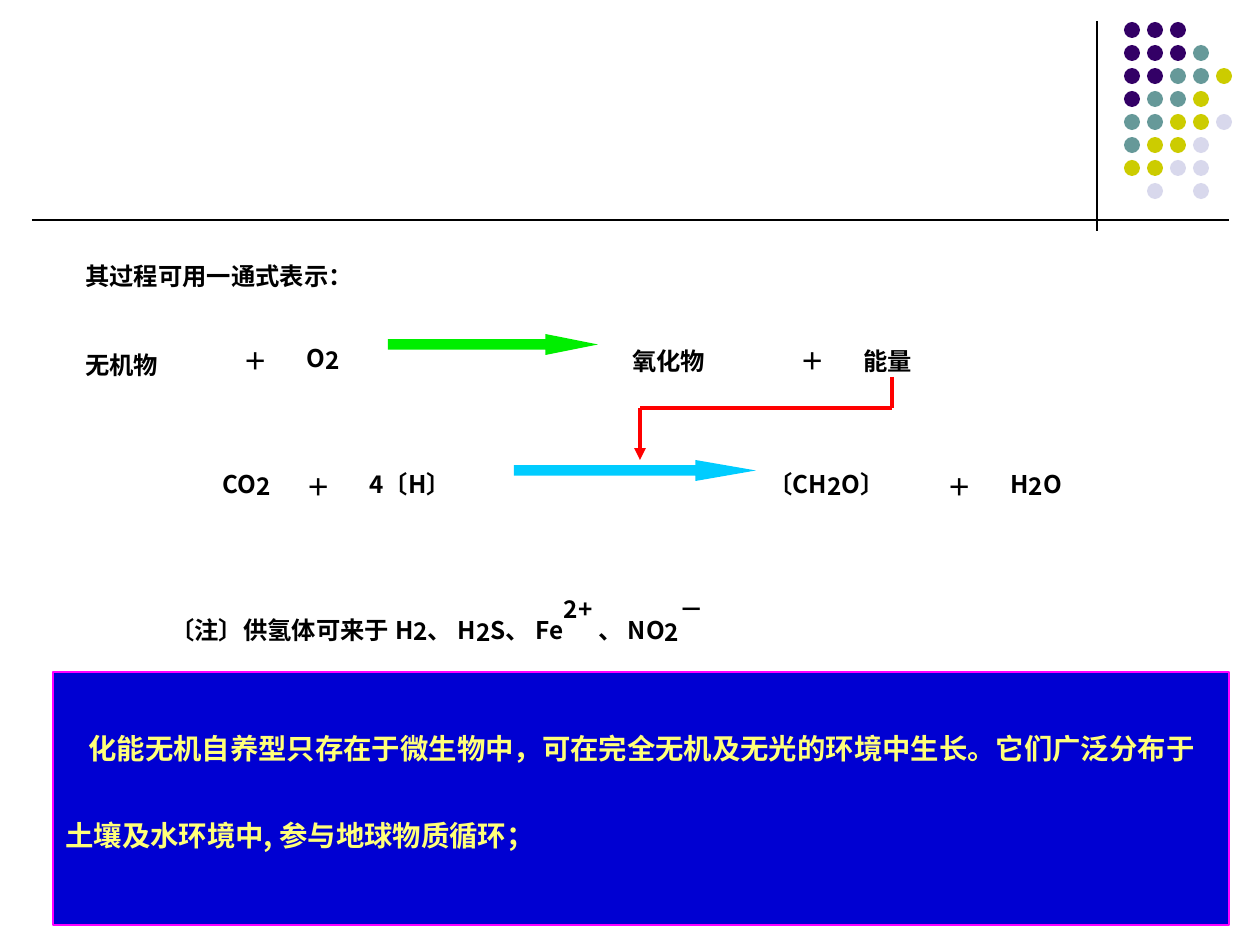
from lxml import etree
from pptx import Presentation
from pptx.dml.color import RGBColor
from pptx.enum.shapes import MSO_CONNECTOR, MSO_SHAPE
from pptx.enum.text import MSO_ANCHOR, MSO_AUTO_SIZE, PP_ALIGN
from pptx.oxml.ns import qn
from pptx.util import Pt

STRAIGHT = MSO_CONNECTOR.STRAIGHT
OVAL, ARROW, RECTANGLE = MSO_SHAPE.OVAL, MSO_SHAPE.RIGHT_ARROW, MSO_SHAPE.RECTANGLE
GROW, TOP, LEFT = MSO_AUTO_SIZE.SHAPE_TO_FIT_TEXT, MSO_ANCHOR.TOP, PP_ALIGN.LEFT

PX = 914400 // 126
FONT = "Noto Sans CJK SC"
SLIDE_SIZE = (1260, 945)

DOT_COLOURS = {"P": "330066", "T": "669999", "Y": "CCCC00", "L": "D8D8EC"}
DOT_ROWS = ["PPP", "PPPT", "PPTTY", "PTTY", "TTYYL", "TYYL", "YYLL", " L L"]
DOT_LEFT, DOT_TOP, DOT_PITCH, DOT_SIZE = 1124, 22, 23, 16

RULES = [(1097, 21, 1097, 231), (32, 220, 1229, 220)]

# Baselines in percent: all text is lowered, which also makes it smaller
BASE, SUB, SUPER = -20, -25, 30

# left, top, width, spans of (text, baseline)
LABELS = [
    (73, 229, 490, [("其过程可用一通式表示：", BASE)]),
    (73, 318, 152, [("无机物", BASE)]),
    (231, 314, 67, [("＋", BASE)]),
    (294, 311, 60, [("O", BASE), ("2", SUB)]),
    (620, 314, 161, [("氧化物", BASE)]),
    (788, 314, 67, [("＋", BASE)]),
    (851, 314, 110, [("能量", BASE)]),
    (210, 437, 82, [("CO", BASE), ("2", SUB)]),
    (294, 440, 67, [("＋", BASE)]),
    (357, 437, 152, [("4〔H〕", BASE)]),
    (756, 437, 188, [("〔CH", BASE), ("2", SUB), ("O〕", BASE)]),
    (935, 440, 67, [("＋", BASE)]),
    (998, 437, 82, [("H", BASE), ("2", SUB), ("O", BASE)]),
]
LABEL_HEIGHT = 63
NOTE = (95, 583, 949, [
    ("〔注〕供氢体可来于 H", BASE), ("2", -22), ("、 H", BASE), ("2", SUB), ("S、 Fe", BASE),
    ("2+ ", SUPER), ("、 NO", BASE), ("2", SUB), ("－", SUPER)])
NOTE_INDENT = 63

# left, top, width, height, colour
REACTION_ARROWS = [(388, 334, 210, 21, "00EE00"), (514, 460, 242, 21, "00CCFF")]
ENERGY_PATH = [(892, 377), (892, 408), (640, 408), (640, 460)]

SUMMARY = "化能无机自养型只存在于微生物中，可在完全无机及无光的环境中生长。它们广泛分布于土壤及水环境中, 参与地球物质循环；"
SUMMARY_PLACE = (53, 672, 1176, 253)
SUMMARY_INDENT = 23


def emu(*lengths):
    return [length * PX for length in lengths]


def rgb(colour):
    return RGBColor.from_string(colour)


def add_line(slide, ends, colour, width):
    line = slide.shapes.add_connector(STRAIGHT, *emu(*ends))
    line.line.color.rgb = rgb(colour)
    line.line.width = Pt(width)
    etree.SubElement(line._element.spPr, qn("a:effectLst"))
    return line


def add_filled(shapes, kind, place, colour):
    shape = shapes.add_shape(kind, *emu(*place))
    shape.shadow.inherit = False
    shape.fill.solid()
    shape.fill.fore_color.rgb = rgb(colour)
    shape.line.fill.background()
    return shape


def add_spans(para, spans, size=24, colour="000000"):
    """Add bold runs, each with an explicit baseline."""
    for text, baseline in spans:
        span = para.add_run()
        span.text = text
        for name, value in {"name": FONT, "size": Pt(size), "bold": True}.items():
            setattr(span.font, name, value)
        span.font.color.rgb = rgb(colour)
        properties = span._r.get_or_add_rPr()
        properties.set("baseline", str(baseline * 1000))
        etree.SubElement(properties, qn("a:ea")).set("typeface", FONT)


def add_label(slide, left, top, width, spans):
    box = slide.shapes.add_textbox(*emu(left, top, width, LABEL_HEIGHT))
    box.text_frame.word_wrap = False
    box.text_frame.auto_size = GROW
    para = box.text_frame.paragraphs[0]
    add_spans(para, spans)
    return para


def set_indent(para, margin, first):
    properties = para._p.get_or_add_pPr()
    properties.set("marL", str(margin * PX))
    properties.set("indent", str(first * PX))


def add_summary(slide):
    panel = add_filled(slide.shapes, RECTANGLE, SUMMARY_PLACE, "0000D2")
    panel.line.color.rgb = rgb("FF00FF")
    panel.line.width = Pt(1.5)
    frame = panel.text_frame
    for name, value in {"word_wrap": True, "auto_size": GROW, "vertical_anchor": TOP}.items():
        setattr(frame, name, value)
    para = frame.paragraphs[0]
    para.alignment = LEFT
    para.line_spacing = 1.35
    set_indent(para, 0, SUMMARY_INDENT)
    add_spans(para, [(SUMMARY, BASE)], 28, "FFFF79")


def main():
    deck = Presentation()
    deck.slide_width, deck.slide_height = emu(*SLIDE_SIZE)
    slide = deck.slides.add_slide(deck.slide_layouts[6])

    for ends in RULES:
        add_line(slide, ends, "000000", 0.75)
    dots = slide.shapes.add_group_shape()
    for row, keys in enumerate(DOT_ROWS):
        for column, key in enumerate(keys):
            if key in DOT_COLOURS:
                place = (DOT_LEFT + column * DOT_PITCH, DOT_TOP + row * DOT_PITCH,
                         DOT_SIZE, DOT_SIZE)
                add_filled(dots.shapes, OVAL, place, DOT_COLOURS[key])

    for label in LABELS:
        add_label(slide, *label)
    for *place, colour in REACTION_ARROWS:
        arrow = add_filled(slide.shapes, ARROW, place, colour)
        arrow.adjustments[0] = 0.5
        arrow.adjustments[1] = place[2] / place[3] / 4

    for start, end in zip(ENERGY_PATH, ENERGY_PATH[1:]):
        segment = add_line(slide, start + end, "FF0000", 2.25)
    etree.SubElement(segment.line._get_or_add_ln(), qn("a:tailEnd")).set("type", "triangle")

    note = add_label(slide, *NOTE)
    note.level = 1
    set_indent(note, NOTE_INDENT, 0)
    add_summary(slide)
    deck.save("out.pptx")


if __name__ == "__main__":
    main()
